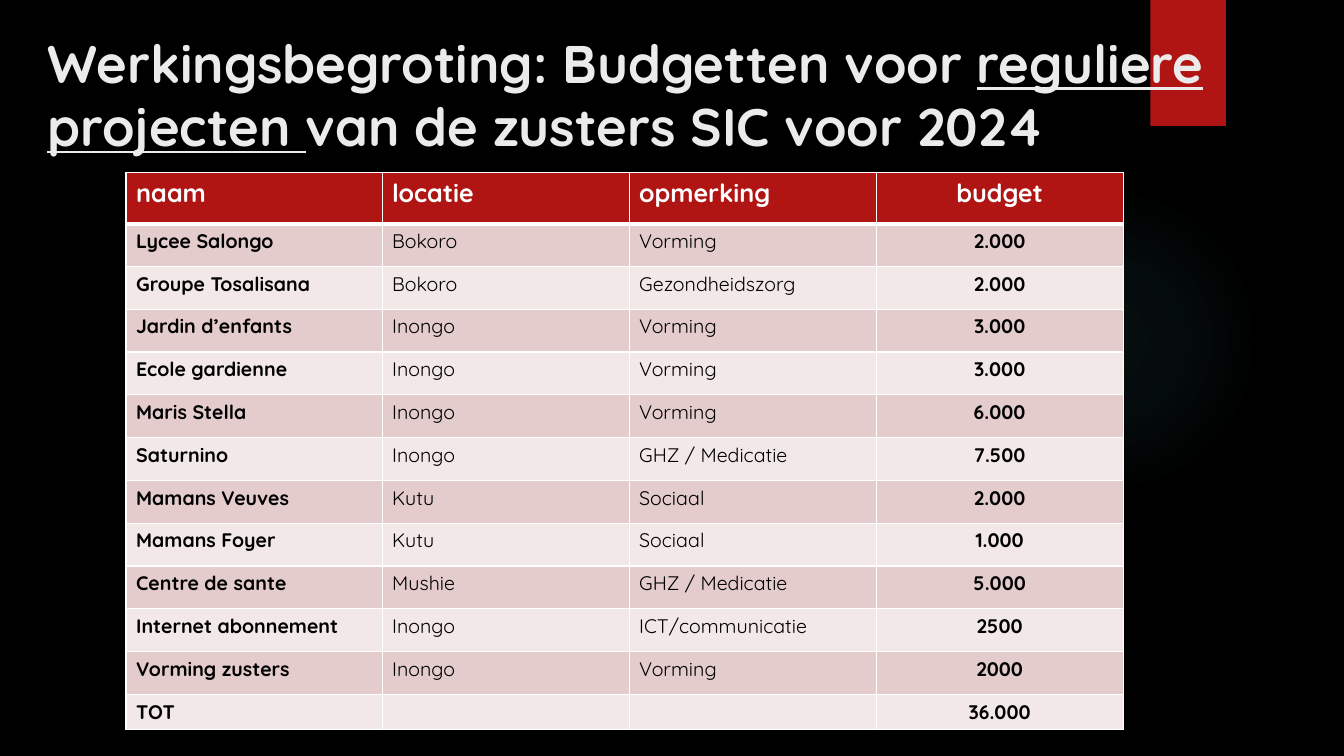
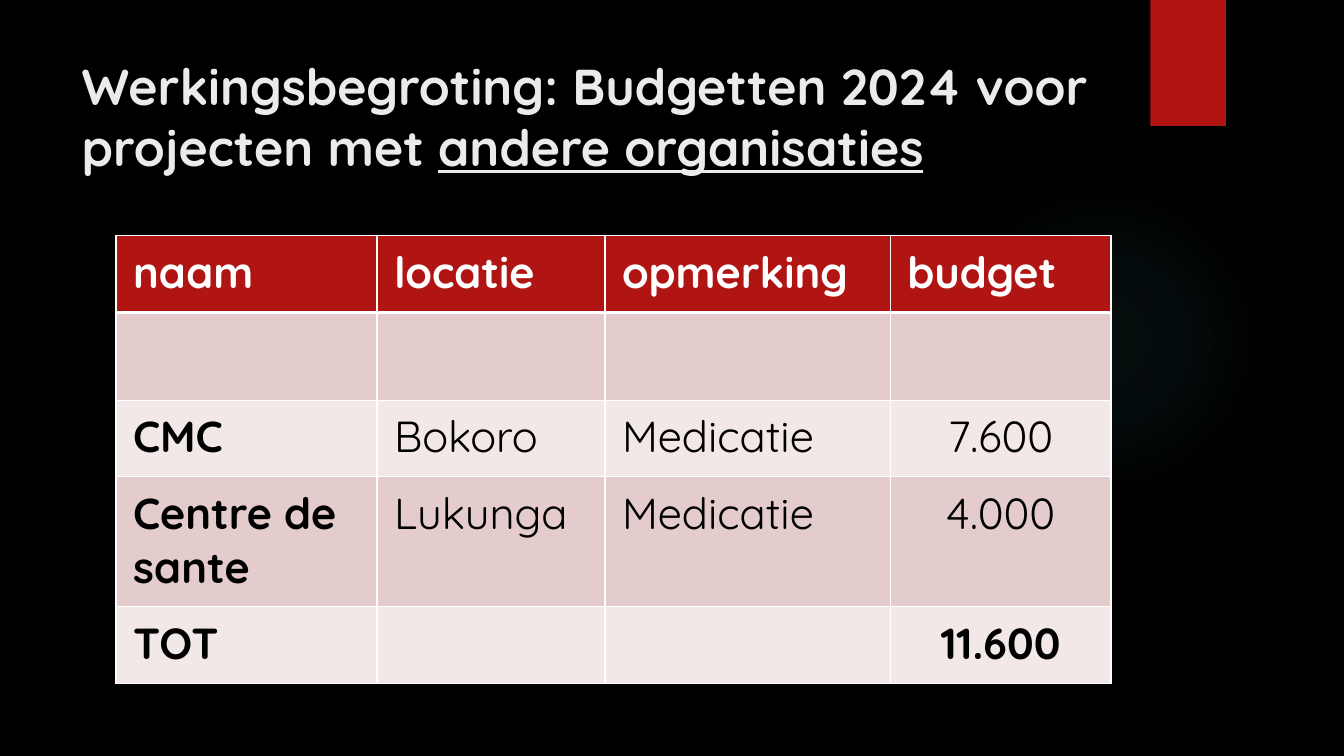
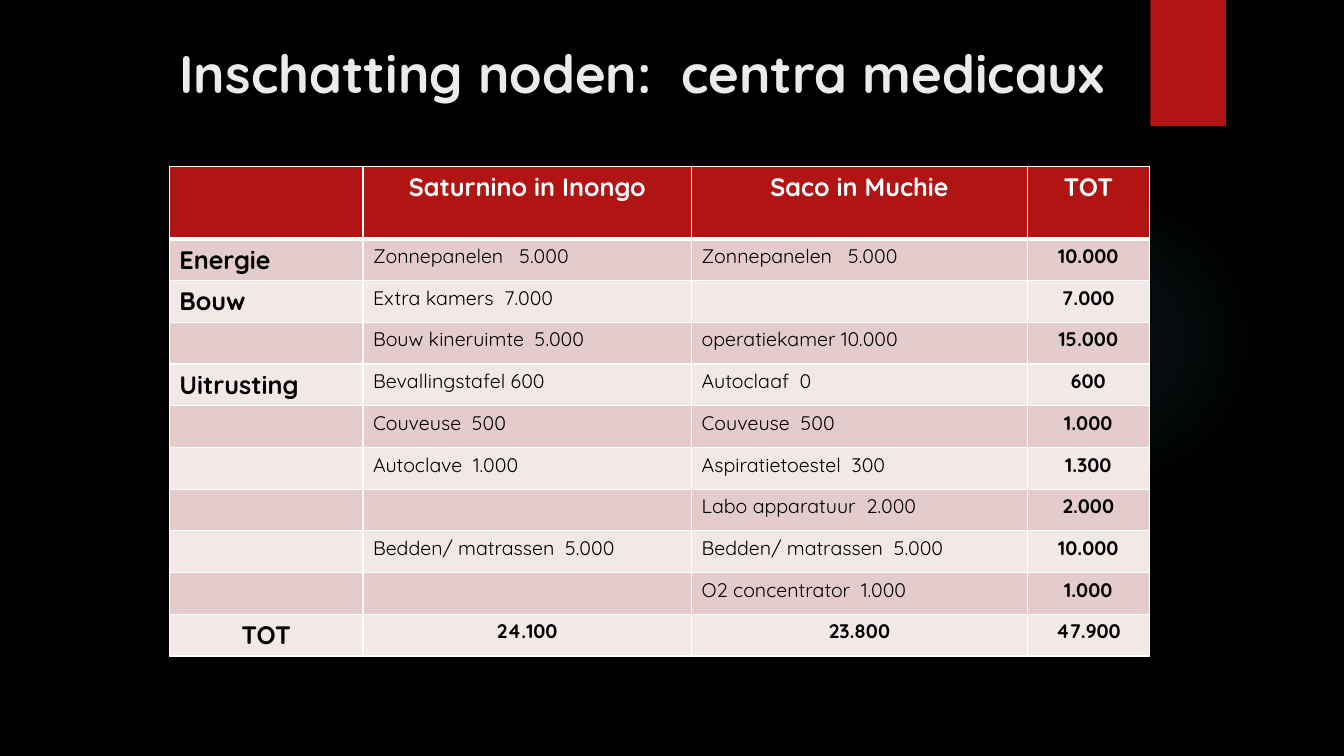
from lxml.etree import SubElement
from pptx import Presentation
from pptx.dml.color import RGBColor
from pptx.enum.shapes import MSO_SHAPE
from pptx.enum.text import MSO_ANCHOR, MSO_AUTO_SIZE, PP_ALIGN
from pptx.oxml import parse_xml
from pptx.oxml.ns import nsdecls, qn
from pptx.util import Inches, Pt

FONT = "Quicksand"
BLACK, WHITE, RED, GLOW = "000000", "FFFFFF", "B01513", "50B9C1"
TITLE_COLOR = "EBEBEB"
BANDS = ("E4CCCC", "F2E8E7")
GLOW_STOPS = [(0, 7), (36, 6), (69, 0)]  # position %, opacity %
ALIGN = {"l": PP_ALIGN.LEFT, "c": PP_ALIGN.CENTER}

# Title runs are (text, underlined). Alignments give one letter per column,
# for the header, the body and the total row.
SLIDES = [
    dict(
        title=[("Werkingsbegroting: Budgetten voor ", False),
               ("reguliere projecten ", True),
               ("van de zusters SIC voor 2024", False)],
        title_box=(0.37, 0.25, 11.72, 1.26), title_size=37.8,
        at=(1.25, 1.71), cols=[2.54, 2.45, 2.45, 2.45],
        heights=[0.51] + [4.67 / 11] * 11 + [0.35],
        margins=(0.1, 0.05), aligns=("lllc", "lllc", "lllc"),
        head_size=18, label_size=14, body_size=14, bold_cols=(0, 3),
        rows=[
            ("naam", "locatie", "opmerking", "budget"),
            ("Lycee Salongo", "Bokoro", "Vorming", "2.000"),
            ("Groupe Tosalisana", "Bokoro", "Gezondheidszorg", "2.000"),
            ("Jardin d’enfants", "Inongo", "Vorming", "3.000"),
            ("Ecole gardienne", "Inongo", "Vorming", "3.000"),
            ("Maris Stella", "Inongo", "Vorming", "6.000"),
            ("Saturnino", "Inongo", "GHZ / Medicatie", "7.500"),
            ("Mamans Veuves", "Kutu", "Sociaal", "2.000"),
            ("Mamans Foyer", "Kutu", "Sociaal", "1.000"),
            ("Centre de sante", "Mushie", "GHZ / Medicatie", "5.000"),
            ("Internet abonnement", "Inongo", "ICT/communicatie", "2500"),
            ("Vorming zusters", "Inongo", "Vorming", "2000"),
            ("TOT", "", "", "36.000"),
        ],
    ),
    dict(
        title=[("Werkingsbegroting: Budgetten 2024 voor projecten met ", False),
               ("andere organisaties", True)],
        title_box=(0.71, 0.5, 10.29, 1.53), title_size=36,
        at=(1.15, 2.34), cols=[2.59, 2.26, 2.83, 2.19],
        heights=[0.76, 0.87, 0.76, 1.29, 0.76],
        margins=(0.17, 0.09), aligns=("llll", "lllc", "lllc"),
        head_size=31, label_size=31, body_size=31, bold_cols=(0,),
        rows=[
            ("naam", "locatie", "opmerking", "budget"),
            ("", "", "", ""),
            ("CMC", "Bokoro", "Medicatie", "7.600"),
            ("Centre de sante", "Lukunga", "Medicatie", "4.000"),
            ("TOT", "", "", "11.600"),
        ],
    ),
    dict(
        title=[("Inschatting noden:  centra medicaux", False)],
        title_box=(1.68, 0.35, 10.41, 0.8), title_size=37.8,
        at=(1.68, 1.65), cols=[1.92, 3.26, 3.33, 1.21],
        heights=[0.72] + [4.14 / 10] * 10,
        margins=(0.1, 0.05), aligns=("lccc", "lllc", "cccc"),
        head_size=18, label_size=18, body_size=14, bold_cols=(0, 3),
        rows=[
            ("", "Saturnino in Inongo", "Saco in Muchie", "TOT"),
            ("Energie", "Zonnepanelen   5.000", "Zonnepanelen   5.000", "10.000"),
            ("Bouw", "Extra kamers  7.000", "", "7.000"),
            ("", "Bouw kineruimte  5.000", "operatiekamer 10.000", "15.000"),
            ("Uitrusting", "Bevallingstafel 600", "Autoclaaf  0", "600"),
            ("", "Couveuse  500", "Couveuse  500", "1.000"),
            ("", "Autoclave  1.000", "Aspiratietoestel  300", "1.300"),
            ("", "", "Labo apparatuur  2.000", "2.000"),
            ("", "Bedden/ matrassen  5.000", "Bedden/ matrassen  5.000", "10.000"),
            ("", "", "O2 concentrator  1.000", "1.000"),
            ("TOT", "24.100", "23.800", "47.900"),
        ],
    ),
]


def rgb(color):
    return RGBColor.from_string(color)


def inches(values):
    return [Inches(v) for v in values]


def add_run(p, text, size, color, bold=True, underline=False):
    r = p.add_run()
    r.text = text
    r.font.name, r.font.size, r.font.bold = FONT, Pt(size), bold
    r.font.color.rgb = rgb(color)
    if underline:
        r.font.underline = True


def decorate_layout(layout, s):
    """Draw the glow and the red tab on slide s, then move them to its layout."""
    glow = s.shapes.add_shape(MSO_SHAPE.OVAL, *inches((9.41, 1.83, 3.08, 3.08)))
    stops = "".join(
        f'<a:gs pos="{pos * 1000}"><a:srgbClr val="{GLOW}">'
        f'<a:alpha val="{opacity * 1000}"/></a:srgbClr></a:gs>'
        for pos, opacity in GLOW_STOPS)
    gradient = parse_xml(
        f'<a:gradFill {nsdecls("a")}><a:gsLst>{stops}</a:gsLst><a:path path="circle">'
        '<a:fillToRect l="50000" t="50000" r="50000" b="50000"/></a:path></a:gradFill>')
    glow.element.spPr.find(qn("a:prstGeom")).addnext(gradient)

    tab = s.shapes.add_shape(MSO_SHAPE.RECTANGLE, *inches((11.41, 0, 0.75, 1.25)))
    tab.fill.solid()
    tab.fill.fore_color.rgb = rgb(RED)
    for shape in (glow, tab):
        shape.line.fill.background()
        shape.shadow.inherit = False
        layout.placeholders[0].element.addprevious(shape.element)


def set_title(s, runs, box, size):
    title = s.shapes.title
    title.left, title.top, title.width, title.height = inches(box)
    tf = title.text_frame
    tf.word_wrap, tf.auto_size = True, MSO_AUTO_SIZE.NONE
    tf.vertical_anchor = MSO_ANCHOR.TOP
    p = tf.paragraphs[0]
    p.alignment = PP_ALIGN.LEFT
    for text, underline in runs:
        add_run(p, text, size, TITLE_COLOR, underline=underline)


def set_borders(cell, top, bottom):
    tcPr = cell._tc.get_or_add_tcPr()
    for side, width in (("L", 1), ("R", 1), ("T", top), ("B", bottom)):
        ln = SubElement(tcPr, qn(f"a:ln{side}"), w=str(Pt(width)))
        SubElement(SubElement(ln, qn("a:solidFill")), qn("a:srgbClr"), val=WHITE)


def add_budget_table(s, spec_):
    rows, cols, heights = spec_["rows"], spec_["cols"], spec_["heights"]
    table = s.shapes.add_table(
        len(rows), len(cols), *inches((*spec_["at"], sum(cols), sum(heights)))).table
    for column, width in zip(table.columns, cols):
        column.width = Inches(width)
    for row, height in zip(table.rows, heights):
        row.height = Inches(height)

    side, edge = inches(spec_["margins"])
    head_align, body_align, total_align = spec_["aligns"]
    last = len(rows) - 1
    for i, texts in enumerate(rows):
        head, total = i == 0, i == last
        aligns = head_align if head else total_align if total else body_align
        for j, text in enumerate(texts):
            cell = table.cell(i, j)
            cell.margin_left = cell.margin_right = side
            cell.margin_top = cell.margin_bottom = edge
            set_borders(cell, top=3 if i == 1 else 1, bottom=3 if head else 1)
            cell.fill.solid()
            cell.fill.fore_color.rgb = rgb(RED if head else BANDS[(i - 1) % 2])
            p = cell.text_frame.paragraphs[0]
            p.alignment = ALIGN[aligns[j]]
            size = spec_["head_size" if head else "body_size" if j else "label_size"]
            if text:
                add_run(p, text, size, WHITE if head else BLACK,
                        bold=head or total or j in spec_["bold_cols"])
            else:
                # Keeps an empty cell from stretching its row
                SubElement(p._p, qn("a:endParaRPr"), sz=str(spec_["body_size"] * 100))


def main():
    prs = Presentation()
    prs.slide_width, prs.slide_height = Inches(13.33), Inches(7.5)
    background = prs.slide_master.background.fill
    background.solid()
    background.fore_color.rgb = rgb(BLACK)
    layout = prs.slide_layouts[5]
    for i, content in enumerate(SLIDES):
        s = prs.slides.add_slide(layout)
        if i == 0:
            decorate_layout(layout, s)
        set_title(s, content["title"], content["title_box"], content["title_size"])
        add_budget_table(s, content)
    prs.save("out.pptx")


if __name__ == "__main__":
    main()
